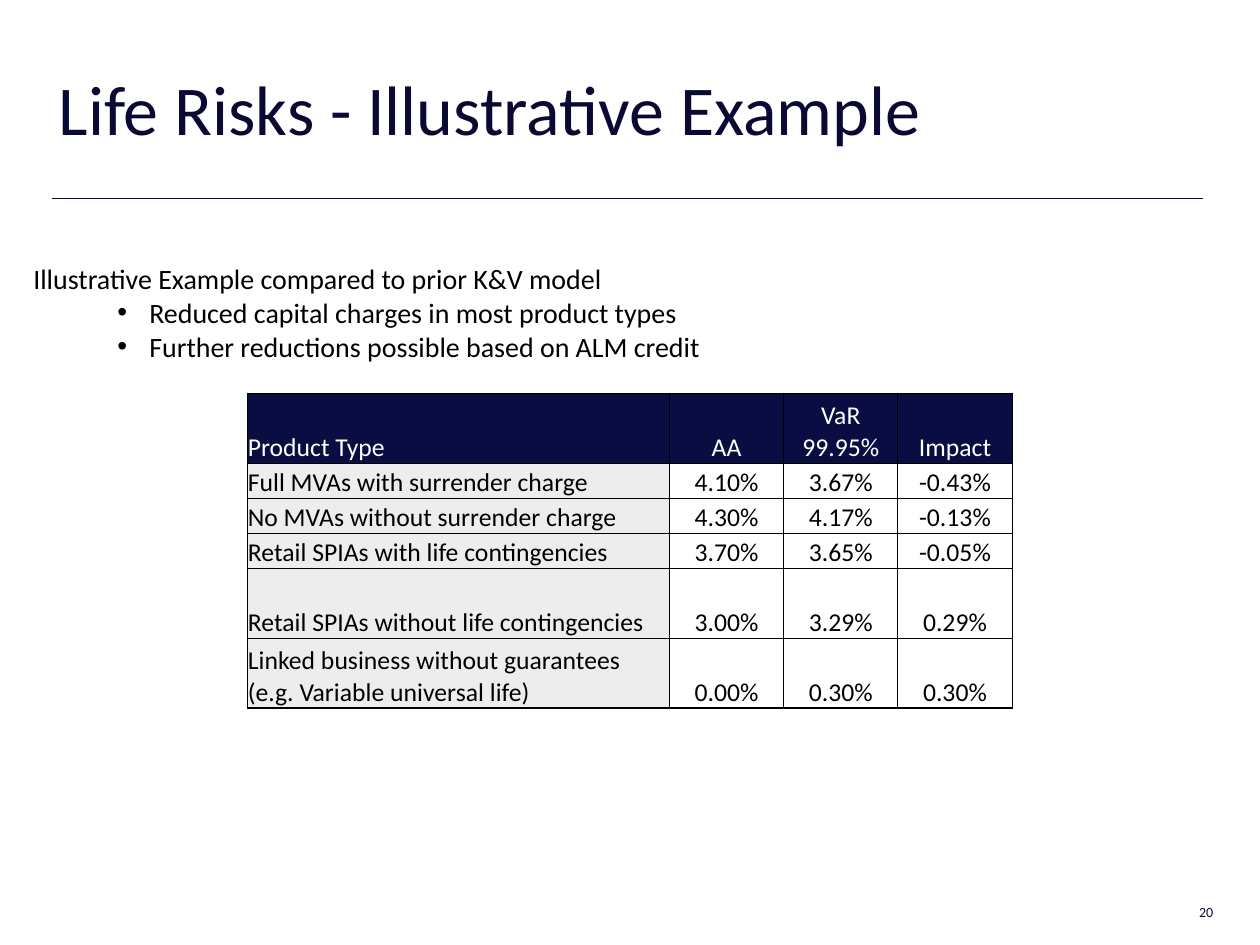
from lxml import etree
from pptx import Presentation
from pptx import util as u
from pptx.dml.color import RGBColor
from pptx.enum import shapes, text
from pptx.oxml.ns import qn

WIDTH = 7.5
HEIGHT = WIDTH * 3 / 4
FONT = "Calibri"
INK, NAVY, GREY, BLACK, WHITE = "0A0933", "0A0D42", "EDEDED", "000000", "FFFFFF"

TITLE = "Life Risks - Illustrative Example"
INTRO = "Illustrative Example compared to prior K&V model"
POINTS = [
    "Reduced capital charges in most product types",
    "Further reductions possible based on ALM credit",
]
PAGE_NUMBER = "20"
ROWS = [
    ("Product Type", "AA", "VaR 99.95%", "Impact"),
    ("Full MVAs with surrender charge", "4.10%", "3.67%", "-0.43%"),
    ("No MVAs without surrender charge", "4.30%", "4.17%", "-0.13%"),
    ("Retail SPIAs with life contingencies", "3.70%", "3.65%", "-0.05%"),
    ("Retail SPIAs without life contingencies", "3.00%", "3.29%", "0.29%"),
    ("Linked business without guarantees (e.g. Variable universal life)",
     "0.00%", "0.30%", "0.30%"),
]
TABLE_HEIGHT = HEIGHT / 3
ROW_SPANS = [2, 1, 1, 1, 2, 2]
COLUMN_WIDTHS = [2.51] + [0.68] * 3


def colour(value):
    return RGBColor.from_string(value)


def style(para, size, value, align=text.PP_ALIGN.LEFT):
    para.alignment = align
    para.font.name = FONT
    para.font.size = u.Pt(size)
    para.font.color.rgb = colour(value)


def place(shape, left, top, width, height):
    shape.left, shape.top = u.Inches(left), u.Inches(top)
    shape.width, shape.height = u.Inches(width), u.Inches(height)


def add_box(page, left, top, width, height, anchor):
    box = page.shapes.add_textbox(*map(u.Inches, (left, top, width, height)))
    box.text_frame.word_wrap = True
    box.text_frame.vertical_anchor = anchor
    return box.text_frame


def add_bullet(para):
    properties = para._p.get_or_add_pPr()
    properties.set("marL", str(u.Inches(0.69)))
    properties.set("indent", str(u.Inches(-0.19)))
    etree.SubElement(properties, qn("a:buFont"), typeface="Arial")
    etree.SubElement(properties, qn("a:buChar"), char="•")


def add_borders(cell):
    properties = cell._tc.get_or_add_tcPr()
    for side in ("lnL", "lnR", "lnT", "lnB"):
        line = etree.SubElement(properties, qn(f"a:{side}"), w=str(u.Pt(0.5)))
        fill = etree.SubElement(line, qn("a:solidFill"))
        etree.SubElement(fill, qn("a:srgbClr"), val=BLACK)


def add_title(page):
    title = page.shapes.title
    place(title, 0.25, 0.34, 7.01, 0.62)
    frame = title.text_frame
    frame.text = TITLE
    frame.word_wrap = True
    frame.auto_size = text.MSO_AUTO_SIZE.NONE
    frame.vertical_anchor = text.MSO_ANCHOR.TOP
    style(frame.paragraphs[0], 30, INK)


def add_rule(page):
    rule = page.shapes.add_connector(
        shapes.MSO_CONNECTOR.STRAIGHT, *map(u.Inches, (0.31, 1.18, 7.16, 1.18)))
    rule.line.color.rgb = colour(INK)
    rule.line.width = u.Pt(0.25)
    etree.SubElement(rule._element.spPr, qn("a:effectLst"))


def add_body(page):
    frame = add_box(page, 0.1, 1.51, 6.91, 2.38, text.MSO_ANCHOR.TOP)
    frame.text = INTRO
    style(frame.paragraphs[0], 12, BLACK)
    for point in POINTS:
        para = frame.add_paragraph()
        para.text = point
        para.level = 1
        add_bullet(para)
        style(para, 12, BLACK)


def add_product_table(page):
    heights = [TABLE_HEIGHT * span / sum(ROW_SPANS) for span in ROW_SPANS]
    table_width = sum(COLUMN_WIDTHS)
    area = ((WIDTH - table_width) / 2, 2.34, table_width, TABLE_HEIGHT)
    table = page.shapes.add_table(
        len(ROWS), len(COLUMN_WIDTHS), *map(u.Inches, area)).table
    for column, width in zip(table.columns, COLUMN_WIDTHS):
        column.width = u.Inches(width)
    for r, (row, height) in enumerate(zip(ROWS, heights)):
        table.rows[r].height = u.Inches(height)
        for c, words in enumerate(row):
            cell = table.cell(r, c)
            cell.text = words
            cell.vertical_anchor = text.MSO_ANCHOR.BOTTOM
            cell.margin_left = cell.margin_right = 0
            cell.margin_top = cell.margin_bottom = 0
            add_borders(cell)
            if r and c:
                cell.fill.background()
            else:
                cell.fill.solid()
                cell.fill.fore_color.rgb = colour(GREY if r else NAVY)
            style(cell.text_frame.paragraphs[0], 11, BLACK if r else WHITE,
                  text.PP_ALIGN.CENTER if c else text.PP_ALIGN.LEFT)


def add_page_number(page):
    frame = add_box(page, 5.57, 5.3, 1.75, 0.25, text.MSO_ANCHOR.MIDDLE)
    frame.text = PAGE_NUMBER
    style(frame.paragraphs[0], 6, NAVY, text.PP_ALIGN.RIGHT)


def main():
    deck = Presentation()
    deck.slide_width, deck.slide_height = u.Inches(WIDTH), u.Inches(HEIGHT)
    page = deck.slides.add_slide(deck.slide_layouts.get_by_name("Title Only"))
    add_rule(page)
    add_body(page)
    add_page_number(page)
    add_title(page)
    add_product_table(page)
    deck.save("out.pptx")


if __name__ == "__main__":
    main()
